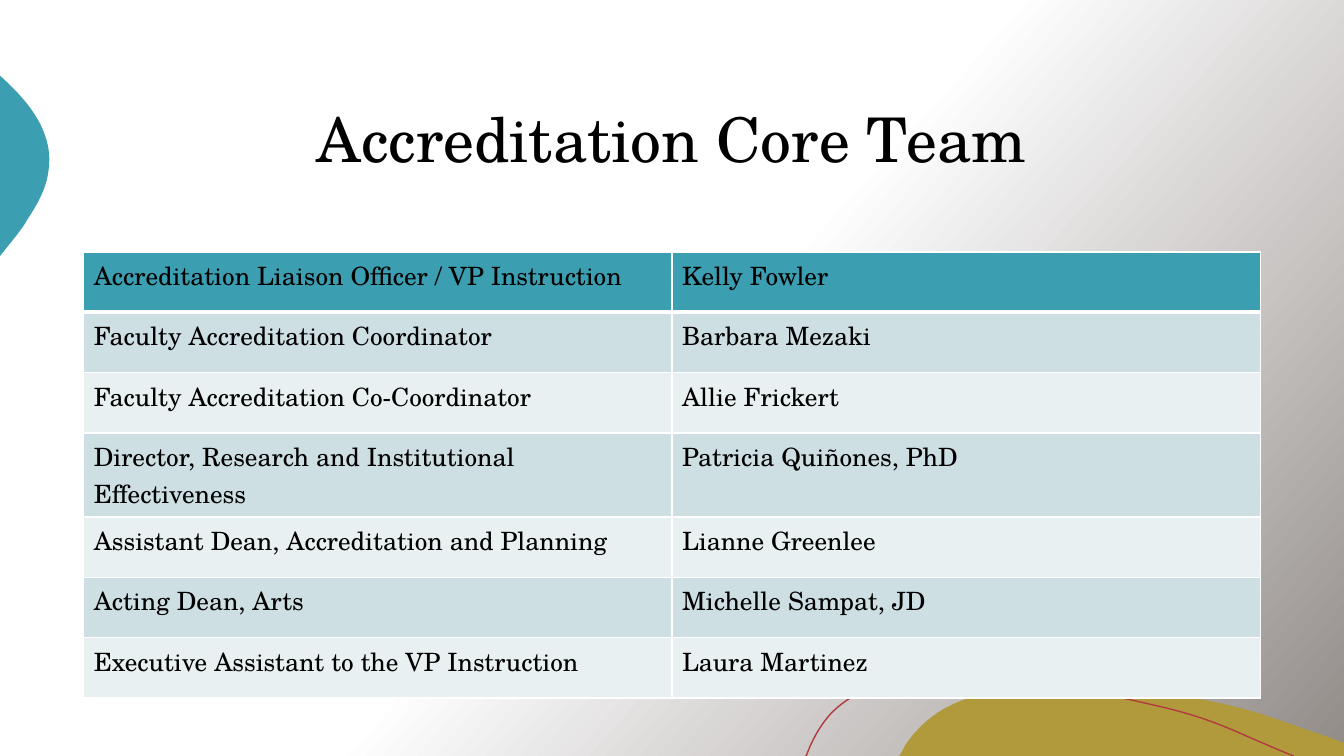
from copy import deepcopy

from lxml.etree import SubElement
from pptx import Presentation
from pptx.dml.color import RGBColor
from pptx.enum.text import MSO_ANCHOR, PP_ALIGN
from pptx.oxml.ns import qn
from pptx.util import Inches, Pt

FONT = "TeX Gyre Schola"
TEAL, GOLD, RED = "3B9EB1", "B19A3B", "B13B3E"
BLACK, WHITE, GREY = "000000", "FFFFFF", "928C89"
BANDS = ["CEDFE4", "E8F0F2"]
UNITS_PER_INCH = 100

TEAM = [
    ("Accreditation Liaison Officer / VP Instruction", "Kelly Fowler"),
    ("Faculty Accreditation Coordinator", "Barbara Mezaki"),
    ("Faculty Accreditation Co-Coordinator", "Allie Frickert"),
    ("Director, Research and Institutional Effectiveness", "Patricia Quiñones, PhD"),
    ("Assistant Dean, Accreditation and Planning", "Lianne Greenlee"),
    ("Acting Dean, Arts", "Michelle Sampat, JD"),
    ("Executive Assistant to the VP Instruction", "Laura Martinez"),
]

# Outlines in inches: a pair is a corner, six numbers are a cubic curve
GOLD_HILL = [
    (10.54, 6.83), (11.28, 6.83, 12.04, 6.9, 12.73, 7.16),
    (12.86, 7.2, 12.98, 7.25, 13.11, 7.29), (13.33, 7.37), (13.33, 7.5),
    (8.92, 7.5), (8.98, 7.39), (9.02, 7.33, 9.06, 7.28, 9.11, 7.23),
    (9.39, 6.93, 9.82, 6.84, 10.23, 6.83), (10.33, 6.83, 10.43, 6.83, 10.54, 6.83),
]
TEAL_BULGE = [
    (0, 0.75), (0.01, 0.76), (0.3, 1.02, 0.54, 1.33, 0.48, 1.7),
    (0.46, 1.87, 0.37, 2.03, 0.27, 2.18), (0.24, 2.24, 0.17, 2.33, 0.08, 2.44),
    (0, 2.54),
]
RED_ARC = [
    (7.99, 7.5), (8, 7.49), (8.06, 7.33, 8.14, 7.19, 8.24, 7.08),
    (8.5, 6.81, 8.89, 6.73, 9.26, 6.72), (9.55, 6.72),
    (10.22, 6.72, 11, 6.89, 11.55, 7.02), (12.09, 7.15, 12.26, 7.27, 12.83, 7.5),
]


def color(hex_string):
    return RGBColor.from_string(hex_string)


def style_text(paragraph, size):
    font = paragraph.font
    font.name, font.size, font.bold = FONT, Pt(size), False
    font.color.rgb = color(BLACK)


def paint_background(slide):
    fill = slide.background.fill
    fill.gradient()
    fill.gradient_angle = 360 - 42
    for stop, shade in zip(fill.gradient_stops, (WHITE, GREY)):
        stop.color.rgb = color(shade)
    # A second white stop keeps the first half plain
    first_stop = slide._element.find(".//" + qn("a:gs"))
    middle_stop = deepcopy(first_stop)
    middle_stop.set("pos", "50000")
    first_stop.addnext(middle_stop)


def bend_segments(curve, segments):
    """Join each run of three lines that stands for a cubic curve."""
    lines = iter(curve._element.findall(".//" + qn("a:lnTo")))
    for segment in segments:
        line = next(lines)
        if len(segment) == 6:
            line.tag = qn("a:cubicBezTo")
            for _ in range(2):
                control = next(lines)
                line.append(control[0])
                control.getparent().remove(control)


def add_curve(slide, outline, fill=None, line=None):
    start, *points = [
        (round(segment[i] * UNITS_PER_INCH), round(segment[i + 1] * UNITS_PER_INCH))
        for segment in outline for i in range(0, len(segment), 2)
    ]
    builder = slide.shapes.build_freeform(*start, scale=Inches(1) / UNITS_PER_INCH)
    builder.add_line_segments(points, close=fill is not None)
    curve = builder.convert_to_shape()
    bend_segments(curve, outline[1:])
    curve.shadow.inherit = False
    if fill:
        curve.fill.solid()
        curve.fill.fore_color.rgb = color(fill)
    else:
        curve.fill.background()
    if line:
        curve.line.color.rgb = color(line)
        curve.line.width = Pt(1)
    else:
        curve.line.fill.background()


def add_title(slide, text):
    title = slide.shapes.title
    title.left, title.top = Inches(0.83), Inches(0.75)
    title.width, title.height = Inches(11.67), Inches(1.32)
    frame = title.text_frame
    frame.text = text
    frame.word_wrap = True
    frame.vertical_anchor = MSO_ANCHOR.MIDDLE
    paragraph = frame.paragraphs[0]
    paragraph.alignment = PP_ALIGN.CENTER
    paragraph.line_spacing = 0.9
    style_text(paragraph, 44)


def set_borders(cell, top=1, bottom=1):
    properties = cell._tc.get_or_add_tcPr()
    for side, width in (("L", 1), ("R", 1), ("T", top), ("B", bottom)):
        border = SubElement(properties, qn("a:ln" + side), w=str(Pt(width)))
        paint = SubElement(border, qn("a:solidFill"))
        SubElement(paint, qn("a:srgbClr"), val=WHITE)


def add_team_table(slide, team):
    table = slide.shapes.add_table(
        len(team), 2, Inches(0.83), Inches(2.5), Inches(11.67), Inches(4.19)
    ).table
    table.first_row = table.horz_banding = False
    for row, member in enumerate(team):
        for column, text in enumerate(member):
            cell = table.cell(row, column)
            cell.text = text
            style_text(cell.text_frame.paragraphs[0], 18)
            # A thick rule parts the first row from the bands
            set_borders(cell, top=3 if row == 1 else 1, bottom=3 if row == 0 else 1)
            cell.fill.solid()
            cell.fill.fore_color.rgb = color(BANDS[(row - 1) % 2] if row else TEAL)


def main():
    presentation = Presentation()
    presentation.slide_width, presentation.slide_height = Inches(13.33), Inches(7.5)
    slide = presentation.slides.add_slide(presentation.slide_layouts[5])

    # Backdrop
    paint_background(slide)
    add_curve(slide, GOLD_HILL, fill=GOLD)
    add_curve(slide, TEAL_BULGE, fill=TEAL)
    add_curve(slide, RED_ARC, line=RED)

    # Content
    add_title(slide, "Accreditation Core Team")
    add_team_table(slide, TEAM)

    presentation.save("out.pptx")


if __name__ == "__main__":
    main()
